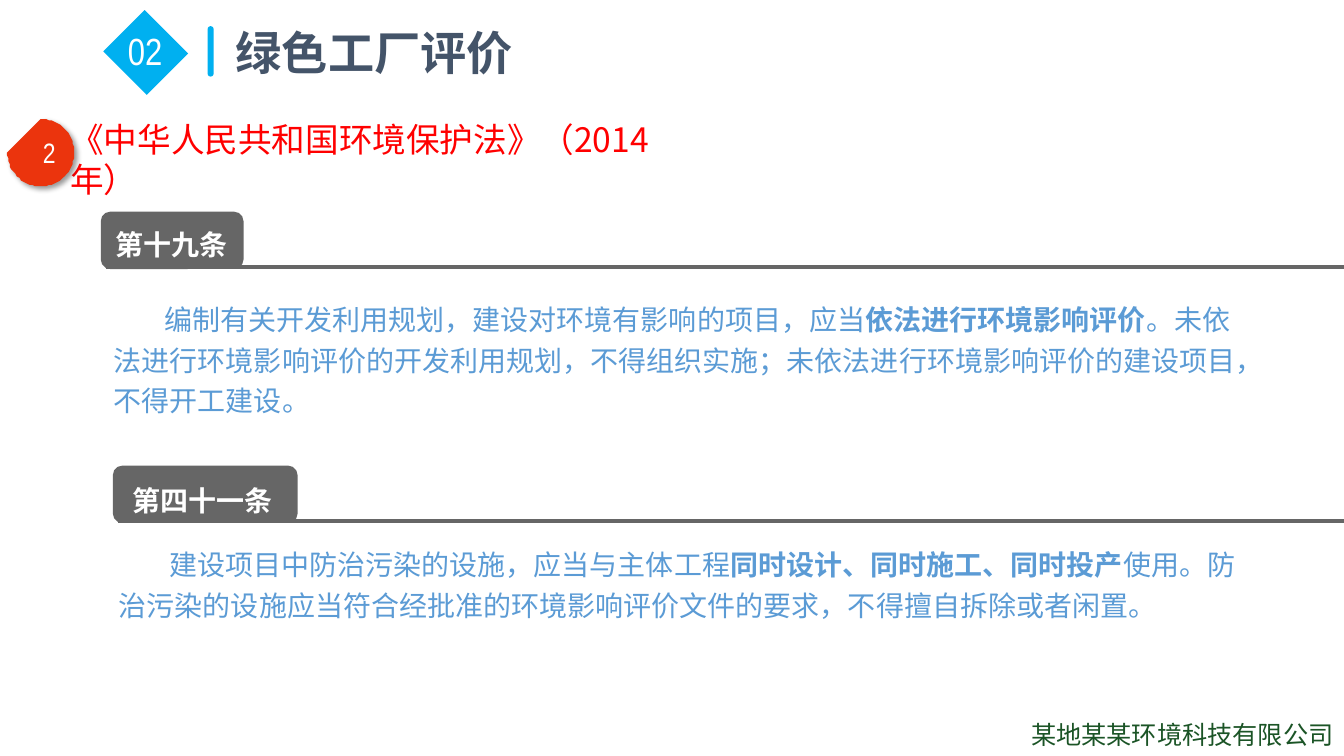
import math

import pptx
import pptx.dml.color
import pptx.enum.dml
import pptx.enum.shapes
import pptx.enum.text
import pptx.oxml
import pptx.oxml.ns
import pptx.util

Pt = pptx.util.Pt
RGBColor = pptx.dml.color.RGBColor
SHAPE = pptx.enum.shapes.MSO_SHAPE
ALIGN = pptx.enum.text.PP_ALIGN

SKY = RGBColor(0x00, 0xB0, 0xF0)
SLATE = RGBColor(0x44, 0x54, 0x69)
RED = RGBColor(0xFF, 0x00, 0x00)
VERMILION = RGBColor(0xEB, 0x34, 0x0D)
GRAY = RGBColor(0x66, 0x66, 0x66)
BLUE = RGBColor(0x5B, 0x9B, 0xD5)
GREEN = RGBColor(0x1B, 0x54, 0x26)
WHITE = RGBColor(0xFF, 0xFF, 0xFF)

CJK = "Noto Sans CJK SC"
NARROW = "Arial Narrow"
PAGE_WIDTH, PAGE_HEIGHT = 960, 540
DROP_SHADOW = (
    '<a:effectLst %s><a:outerShdw blurRad="50800" dist="38100" dir="2700000" '
    'algn="tl" rotWithShape="0"><a:srgbClr val="000000"><a:alpha val="40000"/>'
    "</a:srgbClr></a:outerShdw></a:effectLst>" % pptx.oxml.ns.nsdecls("a")
)
NO_EFFECT = "<a:effectLst %s/>" % pptx.oxml.ns.nsdecls("a")


class SlideBuilder:
    def __init__(self, page):
        self.page = page

    def paint(self, shape, color):
        shape.shadow.inherit = False
        shape.fill.solid()
        shape.fill.fore_color.rgb = color
        shape.line.fill.background()

    def block(self, kind, left, top, width, height, color, rotation=0):
        shape = self.page.shapes.add_shape(kind, Pt(left), Pt(top), Pt(width), Pt(height))
        self.paint(shape, color)
        shape.rotation = rotation
        return shape

    def text(self, spans, left, top, width, height, *, size, color, font=CJK,
             bold=False, wrap=True, align=ALIGN.LEFT, spacing=None, indent=0,
             inset=(7.2, 3.6)):
        """Add a one-paragraph text box; spans is a string or (string, bold) pairs."""
        box = self.page.shapes.add_textbox(Pt(left), Pt(top), Pt(width), Pt(height))
        frame = box.text_frame
        frame.word_wrap = wrap
        frame.auto_size = pptx.enum.text.MSO_AUTO_SIZE.SHAPE_TO_FIT_TEXT
        frame.margin_left = frame.margin_right = Pt(inset[0])
        frame.margin_top = frame.margin_bottom = Pt(inset[1])
        para = frame.paragraphs[0]
        para.alignment = align
        if spacing:
            para.line_spacing = spacing
        if indent:
            para._p.get_or_add_pPr().set("indent", str(Pt(indent)))
        for words, strong in [(spans, bold)] if isinstance(spans, str) else spans:
            span = para.add_run()
            span.text = words
            span.font.size = Pt(size)
            span.font.bold = strong
            span.font.color.rgb = color
            span.font.name = font
            east_asian = pptx.oxml.parse_xml(
                '<a:ea %s typeface="%s"/>' % (pptx.oxml.ns.nsdecls("a"), CJK))
            span.font._element.append(east_asian)

    def rule(self, left, top, right):
        line = self.page.shapes.add_connector(
            pptx.enum.shapes.MSO_CONNECTOR.STRAIGHT, Pt(left), Pt(top), Pt(right), Pt(top))
        line.line.color.rgb = GRAY
        line.line.width = Pt(3)
        line._element.spPr.append(pptx.oxml.parse_xml(NO_EFFECT))

    def drop(self, center_x, center_y, radius, color):
        """Draw a three-quarter disc whose upper-left corner is cut straight."""
        points = [(center_x + radius * math.cos(math.radians(angle)),
                   center_y + radius * math.sin(math.radians(angle)))
                  for angle in range(-90, 181, 5)]
        builder = self.page.shapes.build_freeform(*points[0], scale=Pt(1))
        builder.add_line_segments(points[1:], close=True)
        shape = builder.convert_to_shape()
        self.paint(shape, color)
        properties = shape._element.spPr
        properties.remove(properties.find(pptx.oxml.ns.qn("a:effectLst")))
        properties.append(pptx.oxml.parse_xml(DROP_SHADOW))

    def article(self, title, spans, tab, title_at, body_at):
        """Add a tab with its title, the rule under it and the article's wording."""
        left, top, width = tab
        self.block(SHAPE.ROUNDED_RECTANGLE, left, top, width, 41, GRAY)
        self.text(title, *title_at, width, 34, size=20, color=WHITE, bold=True,
                  wrap=False, spacing=1.2)
        self.rule(left + 3.6, top + 39.6, PAGE_WIDTH)
        self.text(spans, *body_at, 818.6, 94, size=20, color=BLUE, spacing=1.2, indent=36)


def main():
    deck = pptx.Presentation()
    deck.slide_width, deck.slide_height = Pt(PAGE_WIDTH), Pt(PAGE_HEIGHT)
    slide = SlideBuilder(deck.slides.add_slide(deck.slide_layouts[6]))

    slide.text("某地某某环境科技有限公司", 729.4, 510.5, 230.4, 29, size=18,
               color=GREEN, wrap=False)

    slide.text("绿色工厂评价", 159.8, 13, 643.7, 49, size=33, color=SLATE,
               font="Arial", bold=True, align=ALIGN.JUSTIFY, inset=(8.6, 4.3))
    bar = slide.block(SHAPE.ROUND_2_SAME_RECTANGLE, 148.3, 18.7, 4.3, 36, SKY)
    bar.adjustments[0] = bar.adjustments[1] = 0.5
    slide.block(SHAPE.RECTANGLE, 82.1, 16.6, 43.9, 41.8, SKY, rotation=45)
    slide.text("02", 84.2, 16.6, 43.9, 40.3, size=27, color=WHITE, font=NARROW)

    slide.text("《中华人民共和国环境保护法》（2014年）", 43.2, 81.4, 460, 65,
               size=24, color=RED)
    slide.drop(29.2, 109, 24, VERMILION)
    slide.text("2", 23.5, 93.6, 33, 31.7, size=20, color=WHITE, font=NARROW)

    slide.article(
        "第十九条",
        [("编制有关开发利用规划，建设对环境有影响的项目，应当", False),
         ("依法进行环境影响评价", True),
         ("。未依法进行环境影响评价的开发利用规划，不得组织实施；"
          "未依法进行环境影响评价的建设项目，不得开工建设。", False)],
        tab=(72, 151.2, 102), title_at=(75.6, 154.1), body_at=(74.2, 208.1))
    slide.article(
        "第四十一条",
        [("建设项目中防治污染的设施，应当与主体工程", False),
         ("同时设计、同时施工、同时投产", True),
         ("使用。防治污染的设施应当符合经批准的环境影响评价文件的要求，"
          "不得擅自拆除或者闲置。", False)],
        tab=(80.6, 332.6, 132), title_at=(87.8, 337), body_at=(77.8, 383))

    deck.save("out.pptx")


if __name__ == "__main__":
    main()
